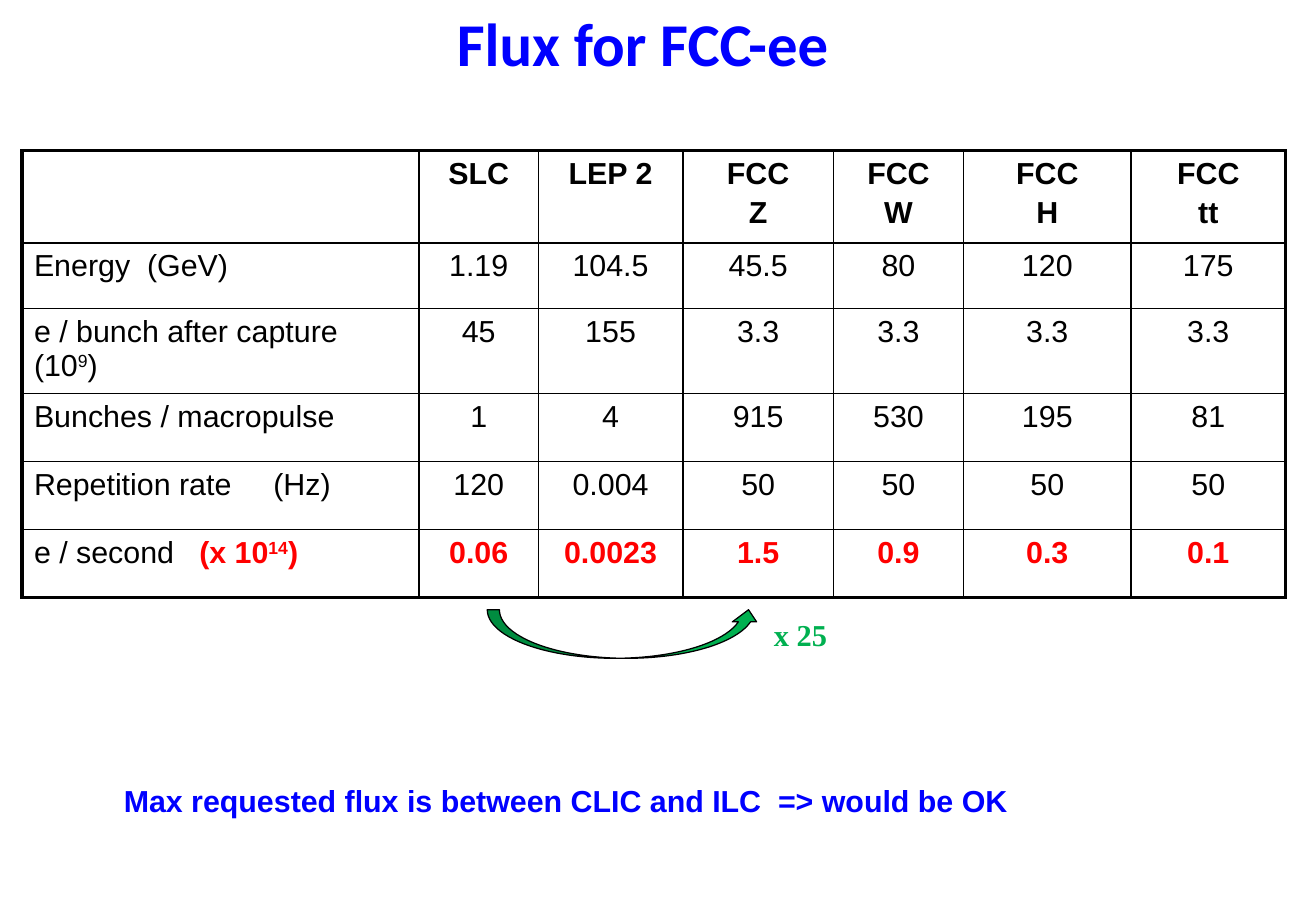
from dataclasses import dataclass

import pptx
import pptx.dml.color
import pptx.enum.shapes
import pptx.enum.text
import pptx.oxml
import pptx.oxml.ns
import pptx.util

Inches = pptx.util.Inches
Pt = pptx.util.Pt
CENTER = pptx.enum.text.PP_ALIGN.CENTER

BLACK, RED, BLUE, GREEN = "000000", "FF0000", "0000FF", "00B050"
THIN, THICK = 1, 2.25


@dataclass(frozen=True)
class Span:
    text: str
    bold: bool = False
    color: str = BLACK
    size: float = 18
    font: str = "Arial"
    raised: bool = False


@dataclass(frozen=True)
class Row:
    label: tuple[Span, ...]
    values: tuple[str, ...]
    height: float
    bold: bool = False
    color: str = BLACK
    tab: float = 0  # inches from the label's left edge to its unit


@dataclass(frozen=True)
class Caption:
    span: Span
    left: float
    top: float
    width: float
    height: float
    centered: bool = False


COLUMN_WIDTHS = (3.27, 0.98, 1.19, 1.24, 1.07, 1.38, 1.27)
ROWS = (
    Row((), ("SLC", "LEP 2", "FCC\nZ", "FCC\nW", "FCC\nH", "FCC\ntt"), 0.76, bold=True),
    Row((Span("Energy  (GeV)"),), ("1.19", "104.5", "45.5", "80", "120", "175"), 0.54),
    Row((Span("e / bunch after capture"), Span("\n"), Span("(10"), Span("9", raised=True), Span(")")),
        ("45", "155", "3.3", "3.3", "3.3", "3.3"), 0.7),
    Row((Span("Bunches / macropulse"),), ("1", "4", "915", "530", "195", "81"), 0.56),
    Row((Span("Repetition rate\t(Hz)"),), ("120", "0.004", "50", "50", "50", "50"), 0.56, tab=1.97),
    Row((Span("e / second\t"), Span("(x 10", True, RED), Span("14", True, RED, raised=True), Span(")", True, RED)),
        ("0.06", "0.0023", "1.5", "0.9", "0.3", "0.1"), 0.56, bold=True, color=RED, tab=1.36),
)
TITLE = Caption(Span("Flux for FCC-ee ", True, BLUE, 36, "Calibri"), 2.69, 0, 5.31, 0.57, centered=True)
CONCLUSION = Caption(Span("Max requested flux is between CLIC and ILC  => would be OK", True, BLUE),
                     0.92, 6.39, 7.55, 0.4)
FACTOR = Caption(Span("x 25", True, GREEN, 18, "Times New Roman"), 6.27, 5.02, 1.91, 0.4)


def rgb(color: str) -> pptx.dml.color.RGBColor:
    return pptx.dml.color.RGBColor.from_string(color)


def add_span(para, span: Span) -> None:
    if span.text == "\n":
        para.add_line_break()
        return
    run = para.add_run()
    run.text = span.text
    run.font.name = span.font
    run.font.size = Pt(span.size)
    run.font.bold = span.bold
    run.font.color.rgb = rgb(span.color)
    if span.raised:
        run.font._element.set("baseline", "30000")


def add_caption(shapes, caption: Caption) -> None:
    box = shapes.add_textbox(*map(Inches, (caption.left, caption.top, caption.width, caption.height)))
    box.text_frame.word_wrap = True
    para = box.text_frame.paragraphs[0]
    if caption.centered:
        para.alignment = CENTER
    add_span(para, caption.span)


def set_tab(para, position: float) -> None:
    para._p.get_or_add_pPr().append(pptx.oxml.parse_xml(
        f'<a:tabLst {pptx.oxml.ns.nsdecls("a")}><a:tab pos="{Inches(position)}" algn="l"/></a:tabLst>'))


def set_borders(cell, widths: dict[str, float]) -> None:
    """Draw the cell's sides, keyed L, R, T and B, in points."""
    properties = cell._tc.get_or_add_tcPr()
    for side, width in widths.items():
        properties.append(pptx.oxml.parse_xml(
            f'<a:ln{side} {pptx.oxml.ns.nsdecls("a")} w="{Pt(width)}">'
            f'<a:solidFill><a:srgbClr val="{BLACK}"/></a:solidFill></a:ln{side}>'))


def fill_label(cell, row: Row) -> None:
    para = cell.text_frame.paragraphs[0]
    para.space_before = Pt(3)
    if row.tab:
        set_tab(para, row.tab)
    for span in row.label:
        add_span(para, span)


def fill_value(cell, row: Row, value: str) -> None:
    frame = cell.text_frame
    for index, line in enumerate(value.split("\n")):
        para = frame.add_paragraph() if index else frame.paragraphs[0]
        para.alignment = CENTER
        para.space_before = Pt(3)
        add_span(para, Span(line, row.bold, row.color))


def add_flux_table(page) -> None:
    last_row, last_column = len(ROWS) - 1, len(COLUMN_WIDTHS) - 1
    table = page.shapes.add_table(
        len(ROWS), len(COLUMN_WIDTHS), Inches(0.18), Inches(1.24),
        Inches(sum(COLUMN_WIDTHS)), Inches(sum(row.height for row in ROWS))).table
    table.first_row = table.horz_banding = False
    for column, width in zip(table.columns, COLUMN_WIDTHS):
        column.width = Inches(width)
    for row_index, row in enumerate(ROWS):
        table.rows[row_index].height = Inches(row.height)
        for column_index in range(len(COLUMN_WIDTHS)):
            cell = table.cell(row_index, column_index)
            cell.margin_left = cell.margin_right = Inches(0.1)
            set_borders(cell, {
                "L": THICK if column_index == 0 else THIN,
                "R": THICK if column_index == last_column else THIN,
                "T": THICK if row_index == 0 else THIN,
                "B": THICK if row_index == last_row else THIN,
            })
            cell.fill.background()
            if column_index == 0:
                fill_label(cell, row)
            else:
                fill_value(cell, row, row.values[column_index - 1])


def add_gain_arrow(page) -> None:
    """Group the curved arrow from SLC to FCC Z with its factor."""
    group = page.shapes.add_group_shape()
    arrow = group.shapes.add_shape(pptx.enum.shapes.MSO_SHAPE.CURVED_UP_ARROW,
                                   Inches(4.01), Inches(5.02), Inches(2.25), Inches(0.4))
    for index, adjustment in enumerate((0.25, 0.5, 0.25)):
        arrow.adjustments[index] = adjustment
    arrow.shadow.inherit = False
    arrow.fill.solid()
    arrow.fill.fore_color.rgb = rgb(GREEN)
    arrow.line.color.rgb = rgb(BLACK)
    arrow.line.width = Pt(0)
    add_caption(group.shapes, FACTOR)


def main() -> None:
    deck = pptx.Presentation()
    deck.slide_width, deck.slide_height = Inches(10.83), Inches(7.5)
    page = deck.slides.add_slide(deck.slide_layouts[6])
    add_flux_table(page)
    add_caption(page.shapes, TITLE)
    add_caption(page.shapes, CONCLUSION)
    add_gain_arrow(page)
    deck.save("out.pptx")


if __name__ == "__main__":
    main()
